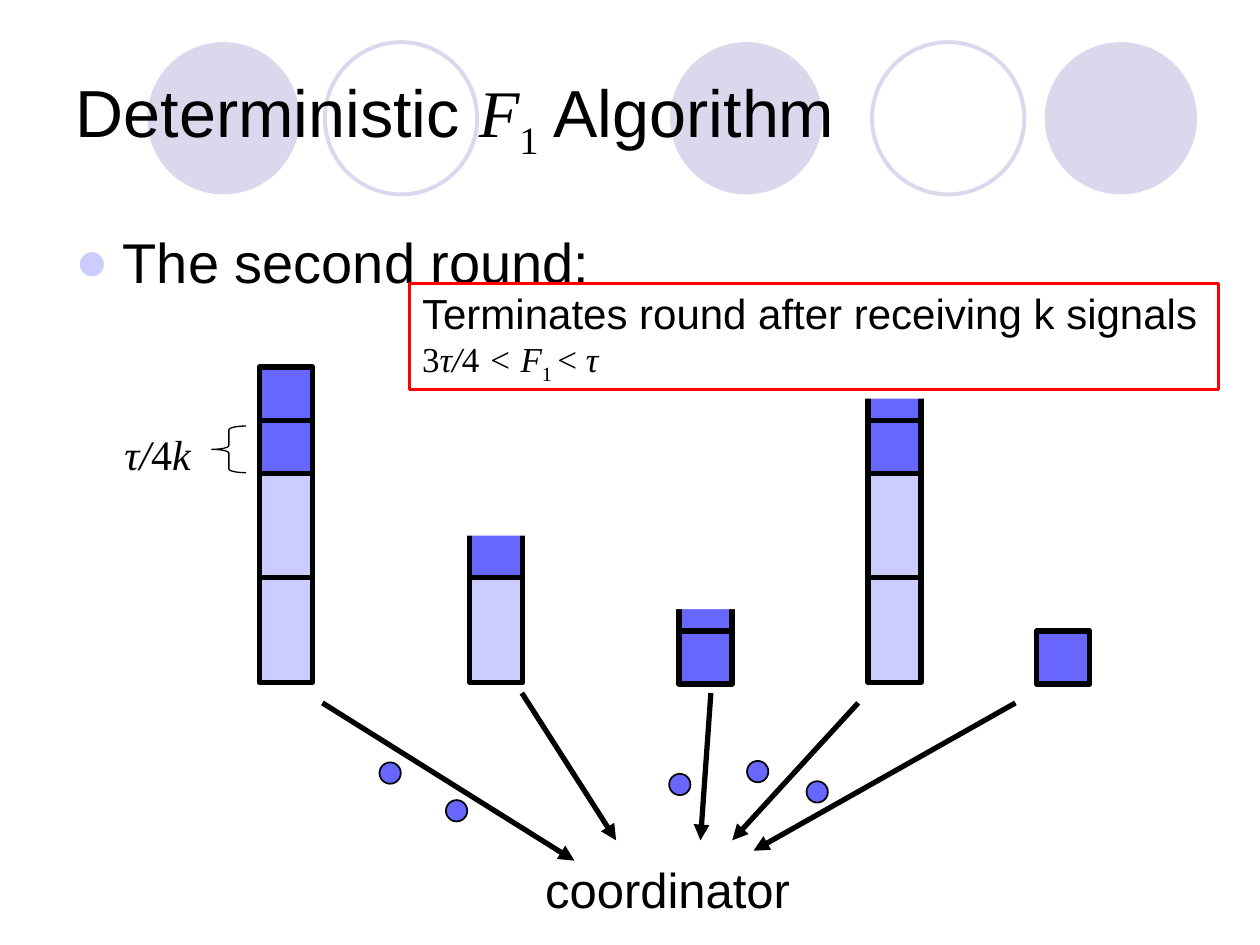
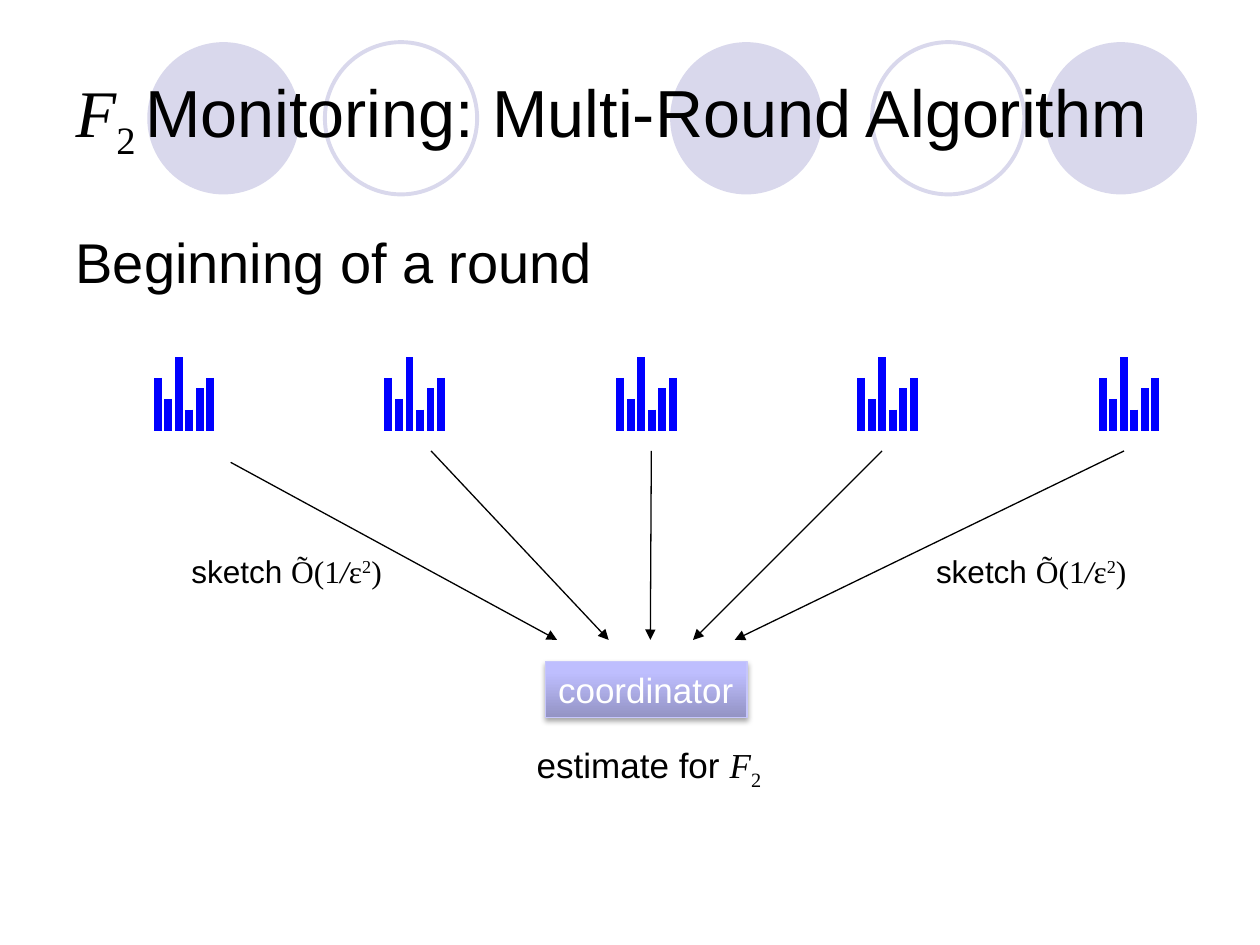
import collections

import pptx
import pptx.dml.color
import pptx.enum.dml
import pptx.enum.shapes
import pptx.enum.text
import pptx.oxml
import pptx.oxml.ns
import pptx.util
from lxml import etree

Cm = pptx.util.Cm
Pt = pptx.util.Pt
RGBColor = pptx.dml.color.RGBColor
SHAPE = pptx.enum.shapes.MSO_SHAPE
qn = pptx.oxml.ns.qn

# Shared colours, fonts and text styles
BLACK = RGBColor(0x00, 0x00, 0x00)
WHITE = RGBColor(0xFF, 0xFF, 0xFF)
CIRCLE = RGBColor(0xD9, 0xD8, 0xEC)
LIGHT = RGBColor(0xCC, 0xCC, 0xFF)
DARK = RGBColor(0x67, 0x67, 0xFF)
BLUE = RGBColor(0x00, 0x00, 0xFF)
RED = RGBColor(0xFF, 0x00, 0x00)
BUTTON_EDGE = RGBColor(0xC6, 0xC6, 0xFB)
BUTTON_BOTTOM = RGBColor(0x93, 0x93, 0xC4)
BUTTON_TOP = RGBColor(0xBE, 0xBE, 0xFE)
SANS = "Arial"
SERIF = "Times New Roman"
PLAIN = {}
MATH = dict(font=SERIF)
ITALIC = dict(font=SERIF, italic=True)
SUB = dict(font=SERIF, baseline=-25)
SUPER = dict(font=SERIF, baseline=30)

# All boxes are in centimetres
Box = collections.namedtuple("Box", "left top width height")
TITLE_BOX = Box(1.27, 0.76, 22.86, 3.18)
BODY_BOX = Box(1.27, 4.45, 22.86, 1.9)


def lengths(box):
    return [Cm(value) for value in box]


def add_span(para, text, size=18, font=SANS, color=BLACK, italic=False, baseline=0):
    span = para.add_run()
    span.text = text
    span.font.size = Pt(size)
    span.font.name = font
    span.font.color.rgb = color
    span.font.italic = italic
    if baseline:
        span._r.get_or_add_rPr().set("baseline", str(baseline * 1000))


def write_line(para, spans, **formats):
    para.alignment = pptx.enum.text.PP_ALIGN.LEFT
    for text, style in spans:
        add_span(para, text, **{**formats, **style})


def fit_frame(frame):
    frame.word_wrap = False
    frame.auto_size = pptx.enum.text.MSO_AUTO_SIZE.SHAPE_TO_FIT_TEXT


def add_label(page, box, spans, **formats):
    label = page.shapes.add_textbox(*lengths(box))
    fit_frame(label.text_frame)
    write_line(label.text_frame.paragraphs[0], spans, **formats)


def add_figure(page, kind, box, fill=None, line=None, width=1):
    figure = page.shapes.add_shape(kind, *lengths(box))
    figure.shadow.inherit = False
    if fill is None:
        figure.fill.background()
    else:
        figure.fill.solid()
        figure.fill.fore_color.rgb = fill
    if line is None:
        figure.line.fill.background()
    else:
        figure.line.color.rgb = line
        figure.line.width = Pt(width)
    return figure


def add_line(shapes, start, end, color=BLACK, width=0.75, arrow=False):
    points = [Cm(value) for value in (*start, *end)]
    line = shapes.add_connector(pptx.enum.shapes.MSO_CONNECTOR.STRAIGHT, *points)
    line.line.color.rgb = color
    line.line.width = Pt(width)
    properties = line.element.spPr
    if arrow:
        etree.SubElement(properties.find(qn("a:ln")), qn("a:tailEnd"), type="triangle")
    etree.SubElement(properties, qn("a:effectLst"))


def add_circle_band(deck, page):
    """Put the row of circles on the master, behind everything."""
    size = 3.07
    circles = [(2.97, True), (6.55, False), (13.51, True), (17.58, False), (21.06, True)]
    for number, (left, filled) in enumerate(circles):
        circle = add_figure(page, SHAPE.OVAL, Box(left, 0.85, size, size),
                            fill=CIRCLE if filled else None,
                            line=None if filled else CIRCLE, width=2.25)
        circle.element.nvSpPr.cNvPr.set("id", str(20 + number))
        deck.slide_master.shapes.element.insert(2, circle.element)


def fill_placeholder(holder, box, spans, size, anchor):
    holder.left, holder.top, holder.width, holder.height = lengths(box)
    frame = holder.text_frame
    frame.word_wrap = True
    frame.auto_size = pptx.enum.text.MSO_AUTO_SIZE.NONE
    frame.vertical_anchor = anchor
    write_line(frame.paragraphs[0], spans, size=size)
    return frame.paragraphs[0]


def set_bullet(para, color=None):
    properties = para._p.get_or_add_pPr()
    properties.set("marL", str(Cm(0.95)))
    properties.set("indent", str(Cm(-0.95)))
    if color is None:
        etree.SubElement(properties, qn("a:buNone"))
        return
    shade = etree.SubElement(properties, qn("a:buClr"))
    etree.SubElement(shade, qn("a:srgbClr"), val=str(color))
    etree.SubElement(properties, qn("a:buFont"), typeface=SANS)
    etree.SubElement(properties, qn("a:buChar"), char="●")


def add_page(deck, title, heading, bullet=None):
    page = deck.slides.add_slide(deck.slide_layouts[1])
    anchors = pptx.enum.text.MSO_ANCHOR
    fill_placeholder(page.shapes.title, TITLE_BOX, title, 38, anchors.MIDDLE)
    body = fill_placeholder(page.placeholders[1], BODY_BOX, [(heading, PLAIN)],
                            32, anchors.TOP)
    set_bullet(body, bullet)
    return page


def add_stack(page, box, light_count, visible=None, has_square=True):
    """Stack light blocks and a dark one, cut off above the visible height."""
    block = 2.12
    bottom = box.top + box.height
    for level in range(light_count + 1):
        add_figure(page, SHAPE.RECTANGLE,
                   Box(box.left, bottom - (level + 1) * block, box.width, block),
                   fill=DARK if level == light_count else LIGHT, line=BLACK, width=3)
    if visible:
        add_figure(page, SHAPE.RECTANGLE,
                   Box(box.left - 0.2, bottom - visible - 1.9, box.width + 0.4, 1.9),
                   fill=WHITE)
    if has_square:
        top = bottom - light_count * block - box.width + 0.03
        add_figure(page, SHAPE.RECTANGLE, Box(box.left, top, box.width, box.width),
                   fill=DARK, line=BLACK, width=3)


def add_site_stacks(page, box):
    stacks = [(0, 2, None, True), (4.24, 1, 2.96, False), (8.46, 0, 1.48, True),
              (12.27, 2, 5.72, True), (15.67, 0, 1.06, True)]
    for offset, light_count, visible, has_square in stacks:
        add_stack(page, Box(box.left + offset, box.top, 1.07, box.height),
                  light_count, visible, has_square)
    # Size of one signal step
    brace = add_figure(page, SHAPE.LEFT_BRACE,
                       Box(box.left - 0.96, box.top + 1.18, 0.69, 0.94),
                       line=BLACK, width=0.75)
    brace.adjustments[0] = 0.11
    add_label(page, Box(box.left - 2.97, box.top + 1.1, 1.85, 1.27),
              [("τ/", ITALIC), ("4", MATH), ("k", ITALIC)], size=24)


def add_arrows(page, box, arrows, width):
    for x1, y1, x2, y2 in arrows:
        add_line(page.shapes, (box.left + x1, box.top + y1),
                 (box.left + x2, box.top + y2), width=width, arrow=True)


def add_signals(page, box):
    arrows = [(0, 0.2, 5.08, 3.38), (4.02, 0, 5.92, 2.97), (7.83, 0, 7.62, 2.97),
              (10.8, 0.2, 8.26, 2.97), (13.97, 0.2, 8.69, 3.18)]
    add_arrows(page, box, arrows, width=3)
    dots = [(1.15, 1.4), (2.49, 2.16), (6.99, 1.63), (8.56, 1.37), (9.76, 1.78)]
    for x, y in dots:
        add_figure(page, SHAPE.OVAL, Box(box.left + x, box.top + y, 0.43, 0.43),
                   fill=DARK, line=BLACK)


def add_round_note(page, box):
    note = add_figure(page, SHAPE.RECTANGLE, box, fill=WHITE, line=RED, width=1.5)
    frame = note.text_frame
    fit_frame(frame)
    write_line(frame.paragraphs[0],
               [("Terminates round after receiving k signals", PLAIN)], size=24)
    write_line(frame.add_paragraph(),
               [("3", MATH), ("τ/", ITALIC), ("4", MATH), (" < F", ITALIC),
                ("1 ", SUB), ("< ", MATH), ("τ", ITALIC)], size=20)


def add_histograms(page, box):
    heights = [1.06, 0.64, 1.48, 0.42, 0.85, 1.06]
    step = 1.06 / 5
    bottom = box.top + box.height
    for offset in (0, 4.65, 9.32, 14.18, 19.05):
        group = page.shapes.add_group_shape()
        for number, height in enumerate(heights):
            x = box.left + offset + number * step
            add_line(group.shapes, (x, bottom - height), (x, bottom),
                     color=BLUE, width=4.5)


def add_sketch_arrows(page, box):
    arrows = [(0, 0.23, 6.58, 3.81), (4.04, 0, 7.62, 3.81), (8.48, 0, 8.46, 3.81),
              (13.13, 0, 9.32, 3.81), (18.01, 0, 10.16, 3.81)]
    add_arrows(page, box, arrows, width=0.75)
    sketch = [("sketch ", PLAIN), ("Õ(1", MATH), ("/", ITALIC), ("ε", MATH),
              ("2", SUPER), (")", MATH)]
    for offset in (-1.04, 13.97):
        add_label(page, Box(box.left + offset, box.top + 1.91, 4.42, 1.02), sketch)


def add_coordinator(page, box):
    button = add_figure(page, SHAPE.RECTANGLE, box, line=BUTTON_EDGE, width=0.75)
    button.fill.gradient()
    button.fill.gradient_angle = 90
    stops = [(0, BUTTON_BOTTOM), (0.8, BUTTON_TOP)]
    for stop, (position, color) in zip(button.fill.gradient_stops, stops):
        stop.position = position
        stop.color.rgb = color
    # Soft shadow below the button
    effects = button.element.spPr.find(qn("a:effectLst"))
    shadow = etree.SubElement(effects, qn("a:outerShdw"), blurRad=str(Pt(3.1)),
                              dist=str(Pt(1.8)), dir="5400000", rotWithShape="0")
    shade = etree.SubElement(shadow, qn("a:srgbClr"), val=str(BLACK))
    etree.SubElement(shade, qn("a:alpha"), val="35000")
    fit_frame(button.text_frame)
    write_line(button.text_frame.paragraphs[0], [("coordinator", PLAIN)],
               size=20, color=WHITE)
    add_label(page, Box(box.left - 0.43, box.top + 1.52, 5.11, 1.12),
              [("estimate for ", PLAIN), ("F", ITALIC), ("2", SUB)], size=20)


def build_second_round(deck):
    page = add_page(deck, [("Deterministic ", PLAIN), ("F", ITALIC), ("1", SUB),
                           (" Algorithm", PLAIN)], "The second round:", bullet=LIGHT)
    add_site_stacks(page, Box(5.23, 7.41, 16.74, 6.35))
    add_signals(page, Box(6.5, 13.97, 13.97, 3.38))
    add_label(page, Box(10.74, 17.2, 5.46, 1.45), [("coordinator", PLAIN)], size=28)
    add_round_note(page, Box(8.26, 5.72, 16.31, 2.13))
    return page


def build_round_beginning(deck):
    page = add_page(deck, [("F", ITALIC), ("2 ", SUB),
                           ("Monitoring: Multi-Round Algorithm", PLAIN)],
                    "Beginning of a round")
    add_histograms(page, Box(3.18, 7.2, 20.11, 1.48))
    add_sketch_arrows(page, Box(4.65, 9.09, 18.01, 3.81))
    add_coordinator(page, Box(11, 13.34, 4.06, 1.12))


def main():
    deck = pptx.Presentation()
    deck.slide_width, deck.slide_height = Cm(25.4), Cm(19.05)
    first_page = build_second_round(deck)
    add_circle_band(deck, first_page)
    build_round_beginning(deck)
    deck.save("out.pptx")


if __name__ == "__main__":
    main()
